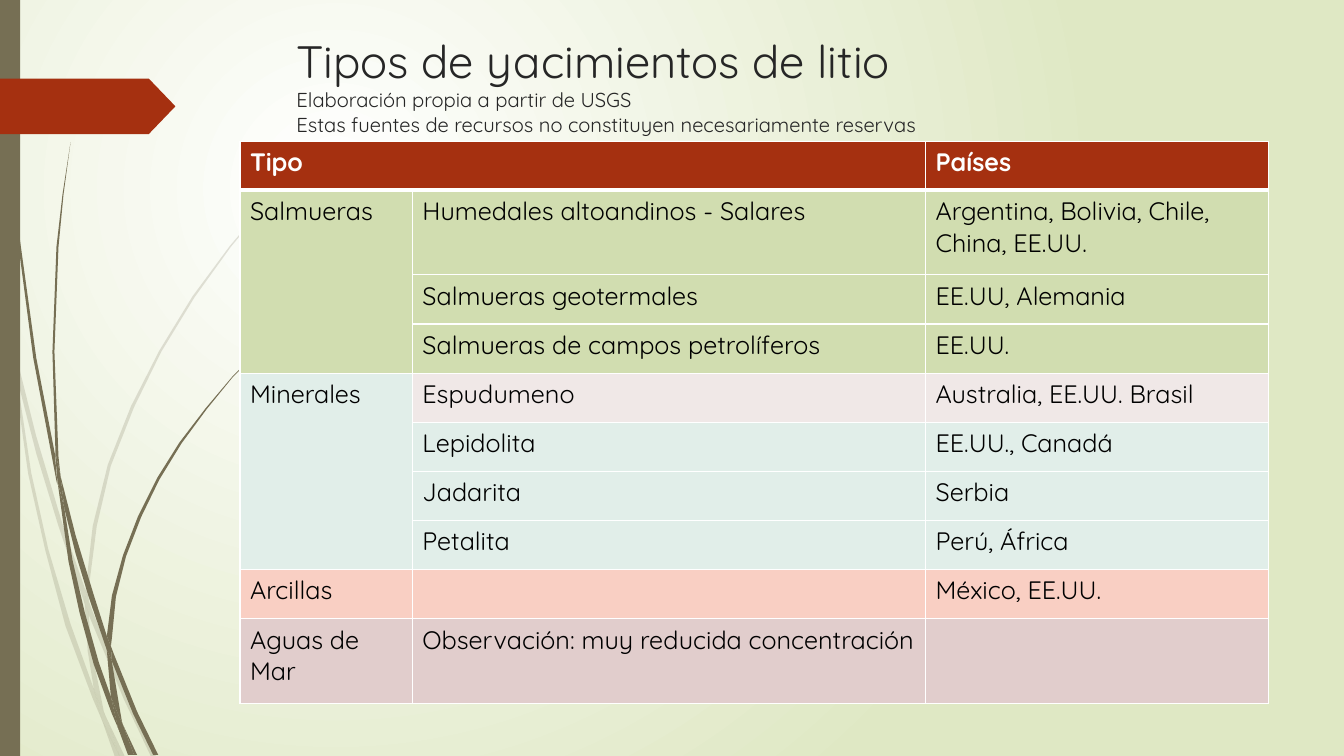
from lxml import etree
from pptx import Presentation, util as u
from pptx.dml.color import RGBColor
from pptx.enum import shapes, text
from pptx.oxml import ns, parse_xml

FONT = "Quicksand"
WHITE = RGBColor(0xFF, 0xFF, 0xFF)
BLACK = RGBColor(0, 0, 0)
INK = RGBColor(0x26, 0x26, 0x26)
OLIVE = RGBColor(0x76, 0x6F, 0x54)
RUST = RGBColor(0xA5, 0x30, 0x10)
PALE_GREEN = RGBColor(0xDF, 0xE8, 0xC4)
BRINE = RGBColor(0xD1, 0xDD, 0xB0)
MINERAL = RGBColor(0xE1, 0xEE, 0xE9)
SPODUMENE = RGBColor(0xF0, 0xE8, 0xE7)
CLAY = RGBColor(0xF9, 0xCF, 0xC3)
SEA = RGBColor(0xE1, 0xCD, 0xCC)

PALE_BLADES = [
    [(.11, 3.5), (.09, 3.22), (0, 2.82), (0, 2.99), (.1, 3.44)],
    [(.58, 5.22), (.84, 5.99), (.85, 5.86), (.62, 5.2), (.36, 4.33), (.14, 3.45),
     (.17, 3.76), (.36, 4.5)],
    [(.92, 6.07), (.88, 5.96), (.88, 6.1), (1.23, 6.94), (1.5, 7.51), (1.55, 7.51),
     (1.27, 6.92)],
    [(1.19, 7.51), (1.24, 7.51), (1.05, 7.11)],
    [(.93, 6.83), (.7, 6.19), (.48, 5.45), (.31, 4.69), (.17, 3.76), (.11, 3.5),
     (.28, 4.7), (.45, 5.46), (.65, 6.21), (.92, 6.93), (1.01, 7.14), (.99, 7.07)],
    [(.84, 5.99), (.87, 6.46), (.93, 6.83), (.96, 6.92), (1.05, 7.11), (1.03, 7.06),
     (.91, 6.46), (.88, 6.1), (.88, 6.08)],
    [(.88, 5.84), (.96, 5.22), (1.1, 4.62), (1.33, 4.04), (1.6, 3.49), (1.93, 2.95),
     (2.29, 2.45), (2.68, 1.98), (3.12, 1.54), (3.12, 1.53), (2.68, 1.97),
     (2.28, 2.44), (1.91, 2.94), (1.58, 3.48), (1.3, 4.03), (1.07, 4.61),
     (.92, 5.22), (.85, 5.84), (.85, 5.86), (.88, 5.96)],
    [(1.01, 7.14), (1.14, 7.51), (1.19, 7.51)],
    [(.88, 6.08), (.88, 6.1), (.88, 5.96), (.85, 5.86), (.84, 5.99)],
    [(.96, 6.92), (.93, 6.83), (.99, 7.07), (1.01, 7.14), (1.19, 7.51), (1.05, 7.11)],
]
DARK_BLADES = [
    [(.07, 1.1), (.17, 2.33), (.33, 3.55), (.56, 4.77), (.57, 4.81), (.55, 4.57),
     (.55, 4.53), (.36, 3.55), (.19, 2.32), (.08, 1.09), (.05, .48), (.04, 0),
     (.03, 0), (.04, .48)],
    [(.88, 5.92), (1.06, 6.45), (1.06, 6.31), (.93, 5.9), (.75, 5.31), (.6, 4.72),
     (.64, 5.05), (.75, 5.49)],
    [(1.13, 6.49), (1.1, 6.41), (1.11, 6.56), (1.32, 7.08), (1.52, 7.49),
     (1.57, 7.49), (1.36, 7.06)],
    [(1.1, 6.91), (.98, 6.57), (.84, 6.07), (.72, 5.56), (.64, 5.05), (.57, 4.77),
     (.68, 5.57), (.79, 6.08), (.93, 6.59), (1.11, 7.08), (1.17, 7.22), (1.16, 7.17)],
    [(.6, 4.72), (.58, 4.53), (.54, 3.49), (.58, 2.45), (.63, 1.93), (.7, 1.41),
     (.62, 1.93), (.56, 2.45), (.52, 3.49), (.55, 4.49)],
    [(1.33, 7.49), (1.36, 7.49), (1.22, 7.19)],
    [(.57, 4.77), (.64, 5.05), (.6, 4.72), (.55, 4.49), (.55, 4.53)],
    [(1.11, 6.33), (1.15, 5.92), (1.25, 5.52), (1.4, 5.13), (1.58, 4.76),
     (1.8, 4.4), (2.05, 4.06), (2.31, 3.74), (2.61, 3.44), (2.6, 3.44),
     (2.31, 3.73), (2.04, 4.05), (1.78, 4.39), (1.56, 4.74), (1.37, 5.12),
     (1.22, 5.51), (1.11, 5.91), (1.06, 6.31), (1.1, 6.41)],
    [(1.17, 7.22), (1.27, 7.49), (1.31, 7.49)],
    [(1.06, 6.45), (1.1, 6.91), (1.16, 7.06), (1.22, 7.19), (1.21, 7.16),
     (1.11, 6.56), (1.09, 6.51)],
    [(1.06, 6.45), (1.09, 6.51), (1.11, 6.56), (1.1, 6.41), (1.06, 6.31)],
    [(1.16, 7.06), (1.1, 6.91), (1.17, 7.22), (1.3, 7.49), (1.33, 7.49), (1.22, 7.19)],
]

COLUMNS = [1.71, 5.09, 3.4]
TABLE_HEIGHT = 5.58
TALL = .84
SHORT = (TABLE_HEIGHT - 2 * TALL) / 8
ROWS = [
    (SHORT, RUST, RUST, ["Tipo", "", "Países"]),
    (TALL, BRINE, BRINE, ["Salmueras", "Humedales altoandinos - Salares",
                          "Argentina, Bolivia, Chile, China, EE.UU."]),
    (SHORT, BRINE, BRINE, ["", "Salmueras geotermales", "EE.UU, Alemania"]),
    (SHORT, BRINE, BRINE, ["", "Salmueras de campos petrolíferos", "EE.UU."]),
    (SHORT, MINERAL, SPODUMENE, ["Minerales", "Espudumeno", "Australia, EE.UU. Brasil"]),
    (SHORT, MINERAL, MINERAL, ["", "Lepidolita", "EE.UU., Canadá"]),
    (SHORT, MINERAL, MINERAL, ["", "Jadarita", "Serbia"]),
    (SHORT, MINERAL, MINERAL, ["", "Petalita", "Perú, África"]),
    (SHORT, CLAY, CLAY, ["Arcillas", "", "México, EE.UU."]),
    (TALL, SEA, SEA, ["Aguas de Mar", "Observación: muy reducida concentración", ""]),
]
MERGES = [((0, 0), (0, 1)), ((1, 0), (3, 0)), ((4, 0), (7, 0))]


class Deck:
    """Holds the style and the current slide, and adds each kind of element."""

    def __init__(self):
        self.prs = Presentation()
        self.prs.slide_width, self.prs.slide_height = u.Inches(13.33), u.Inches(7.5)
        self.s = self.prs.slides.add_slide(self.prs.slide_layouts[5])

    def background(self, inner, outer):
        fill = self.s.background.fill
        fill.gradient()
        for stop, color in zip(fill.gradient_stops, (inner, outer)):
            stop.color.rgb = color
        grad = self.s.element.find(".//" + ns.qn("a:gradFill"))
        grad.replace(grad.find(ns.qn("a:lin")), parse_xml(
            f'<a:path {ns.nsdecls("a")} path="circle"><a:fillToRect '
            'l="50000" t="50000" r="100000" b="100000"/></a:path>'))

    def paint(self, sp, color):
        sp.fill.solid()
        sp.fill.fore_color.rgb = color
        sp.line.fill.background()
        sp.shadow.inherit = False

    def shape(self, kind, x, y, w, h, color):
        sp = self.s.shapes.add_shape(kind, *map(u.Inches, (x, y, w, h)))
        self.paint(sp, color)
        return sp

    def blade(self, points, color, alpha=None):
        outline = [(u.Inches(x), u.Inches(y)) for x, y in points]
        builder = self.s.shapes.build_freeform(*outline[0])
        builder.add_line_segments(outline[1:], close=True)
        sp = builder.convert_to_shape()
        self.paint(sp, color)
        if alpha:
            clr = sp._element.spPr.find(".//" + ns.qn("a:srgbClr"))
            etree.SubElement(clr, ns.qn("a:alpha"), val=str(alpha * 1000))

    def font(self, r, size, color, bold=False):
        r.font.name, r.font.size, r.font.bold = FONT, u.Pt(size), bold
        r.font.color.rgb = color

    def title(self, lines, sizes, x, y, w, h):
        sp = self.s.shapes.title
        sp.left, sp.top, sp.width, sp.height = map(u.Inches, (x, y, w, h))
        tf = sp.text_frame
        tf.word_wrap = True
        tf.auto_size = text.MSO_AUTO_SIZE.NONE
        tf.vertical_anchor = text.MSO_ANCHOR.TOP
        p = tf.paragraphs[0]
        p.text = "\v".join(lines)
        p.alignment = text.PP_ALIGN.LEFT
        for r, size in zip(p.runs, sizes):
            self.font(r, size, INK)
        for br, size in zip(p._p.iter(ns.qn("a:br")), sizes):
            etree.SubElement(br, ns.qn("a:rPr"), sz=str(round(size * 100)))

    def borders(self, cell, top, bottom):
        tcPr = cell._tc.get_or_add_tcPr()
        for i, (side, pt) in enumerate(zip("LRTB", (1, 1, top, bottom))):
            tcPr.insert(i, parse_xml(
                f'<a:ln{side} {ns.nsdecls("a")} w="{u.Pt(pt)}"><a:solidFill>'
                f'<a:srgbClr val="{WHITE}"/></a:solidFill></a:ln{side}>'))

    def table(self, x, y):
        size = map(u.Inches, (x, y, sum(COLUMNS), TABLE_HEIGHT))
        table = self.s.shapes.add_table(len(ROWS), len(COLUMNS), *size).table
        for column, width in zip(table.columns, COLUMNS):
            column.width = u.Inches(width)
        for i, (height, first, rest, words) in enumerate(ROWS):
            table.rows[i].height = u.Inches(height)
            for j, word in enumerate(words):
                cell = table.cell(i, j)
                cell.fill.solid()
                cell.fill.fore_color.rgb = rest if j else first
                self.borders(cell, 3 if i == 1 else 1, 3 if i == 0 else 1)
                cell.text_frame.text = word
                for r in cell.text_frame.paragraphs[0].runs:
                    self.font(r, 18, BLACK if i else WHITE, i == 0)
        for start, end in MERGES:
            table.cell(*start).merge(table.cell(*end))


def main():
    deck = Deck()
    deck.background(WHITE, PALE_GREEN)
    for points in PALE_BLADES:
        deck.blade(points, OLIVE, 20)
    for points in DARK_BLADES:
        deck.blade(points, OLIVE)
    deck.shape(shapes.MSO_SHAPE.RECTANGLE, 0, 0, .2, 7.5, OLIVE)
    arrow = deck.shape(shapes.MSO_SHAPE.PENTAGON, 0, .78, 1.74, .55, RUST)
    arrow.adjustments[0] = .48
    deck.title(["Tipos de yacimientos de litio",
                "Elaboración propia a partir de USGS",
                "Estas fuentes de recursos no constituyen necesariamente reservas"],
               [32.4, 14.4, 14.4], 2.84, .28, 9.75, .76)
    deck.table(2.38, 1.4)
    deck.prs.save("out.pptx")


if __name__ == "__main__":
    main()
